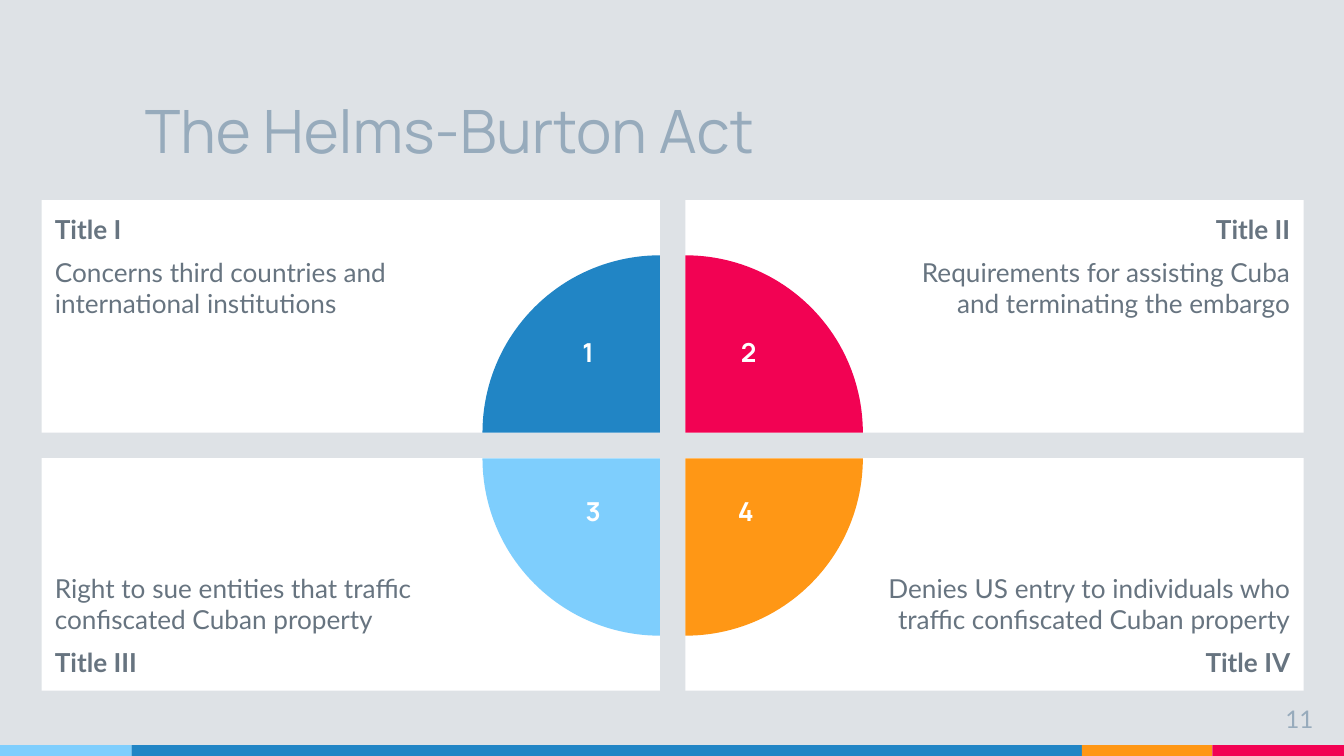
"""Build the Helms-Burton Act slide: four cards around a divided circle."""
from pptx import Presentation
from pptx.dml.color import RGBColor
from pptx.enum.shapes import MSO_SHAPE
from pptx.enum.text import MSO_ANCHOR, PP_ALIGN
from pptx.util import Inches, Pt

COLORS = {
    "background": "DEE2E6", "heading": "97ABBC", "body": "677480", "white": "FFFFFF",
    "blue": "2185C5", "red": "F20253", "orange": "FF9715", "sky": "7ECEFD",
}
TITLE = "The Helms-Burton Act"
PAGE_NUMBER = "11"
CARDS = [
    {"column": 0, "row": 0, "title": "Title I", "color": "blue", "turn": 0,
     "text": "Concerns third countries and international institutions",
     "number": "1", "number_box": (4.2, 2.45, 0.35, 0.55)},
    {"column": 1, "row": 0, "title": "Title II", "color": "red", "turn": 90,
     "text": "Requirements for assisting Cuba and terminating the embargo",
     "number": "2", "number_box": (5.35, 2.45, 0.44, 0.55)},
    {"column": 0, "row": 1, "title": "Title III", "color": "sky", "turn": 270,
     "text": "Right to sue entities that traffic confiscated Cuban property",
     "number": "3", "number_box": (4.2, 3.64, 0.43, 0.58)},
    {"column": 1, "row": 1, "title": "Title IV", "color": "orange", "turn": 180,
     "text": "Denies US entry to individuals who traffic confiscated Cuban property",
     "number": "4", "number_box": (5.33, 3.64, 0.44, 0.58)},
]
WIDTH = 10
HEIGHT = WIDTH * 9 / 16
STRIPES = [("sky", 0.98), ("blue", 7.07), ("orange", 0.97), ("red", 0.98)]
STRIPE_HEIGHT = 0.08
CARD_LEFT, CARD_TOP, CARD_WIDTH, CARD_HEIGHT = 0.31, 1.49, 4.6, 1.73
GAP = 0.19
DIAMETER = 2.64
INSET, CIRCLE_INSET = 0.1, 1.5


def rgb(name):
    return RGBColor.from_string(COLORS[name])


def add_block(slide, kind, box, color):
    shape = slide.shapes.add_shape(kind, *map(Inches, box))
    shape.shadow.inherit = False
    shape.fill.solid()
    shape.fill.fore_color.rgb = rgb(color)
    shape.line.fill.background()
    return shape


def set_insets(frame, left=INSET, top=INSET, right=INSET, bottom=INSET):
    frame.margin_left, frame.margin_top = Inches(left), Inches(top)
    frame.margin_right, frame.margin_bottom = Inches(right), Inches(bottom)
    frame.word_wrap = True


def write(paragraph, text, size, font, color, align=PP_ALIGN.LEFT, bold=False):
    paragraph.text = text
    paragraph.alignment = align
    paragraph.font.size = Pt(size)
    paragraph.font.name = font
    paragraph.font.color.rgb = rgb(color)
    paragraph.font.bold = bold


def add_label(slide, box, *style, inset=INSET, anchor=MSO_ANCHOR.TOP):
    frame = slide.shapes.add_textbox(*map(Inches, box)).text_frame
    set_insets(frame, top=inset, bottom=inset)
    frame.vertical_anchor = anchor
    write(frame.paragraphs[0], *style)


def add_card(slide, card):
    on_right, on_bottom = card["column"] == 1, card["row"] == 1
    left = CARD_LEFT + card["column"] * (CARD_WIDTH + GAP)
    top = CARD_TOP + card["row"] * (CARD_HEIGHT + GAP)
    shape = add_block(slide, MSO_SHAPE.RECTANGLE, (left, top, CARD_WIDTH, CARD_HEIGHT), "white")
    frame = shape.text_frame
    set_insets(frame, **{"left" if on_right else "right": CIRCLE_INSET})
    frame.vertical_anchor = MSO_ANCHOR.BOTTOM if on_bottom else MSO_ANCHOR.TOP
    align = PP_ALIGN.RIGHT if on_right else PP_ALIGN.LEFT
    lines = [(card["title"], True), (card["text"], False)]
    first, second = frame.paragraphs[0], frame.add_paragraph()
    for paragraph, (text, bold) in zip((first, second), lines[::-1] if on_bottom else lines):
        write(paragraph, text, 14, "Lato", "body", align, bold)
    second.space_before = second.space_after = Pt(6)


def add_quarter(slide, card):
    center_x = CARD_LEFT + CARD_WIDTH + card["column"] * GAP
    center_y = CARD_TOP + CARD_HEIGHT + card["row"] * GAP
    box = (center_x - DIAMETER / 2, center_y - DIAMETER / 2, DIAMETER, DIAMETER)
    quarter = add_block(slide, MSO_SHAPE.PIE, box, card["color"])
    quarter.adjustments[0], quarter.adjustments[1] = 108, 162
    quarter.rotation = card["turn"]


def main():
    presentation = Presentation()
    presentation.slide_width, presentation.slide_height = Inches(WIDTH), Inches(HEIGHT)
    slide = presentation.slides.add_slide(presentation.slide_layouts[6])
    slide.background.fill.solid()
    slide.background.fill.fore_color.rgb = rgb("background")

    left = 0
    for color, width in STRIPES:
        box = (left, HEIGHT - STRIPE_HEIGHT, width, STRIPE_HEIGHT)
        add_block(slide, MSO_SHAPE.RECTANGLE, box, color)
        left += width

    add_label(slide, (0.98, 0.39, 7.07, 0.94), TITLE, 32, "Manrope", "heading",
              anchor=MSO_ANCHOR.BOTTOM)
    add_label(slide, (9.27, 5.14, 0.6, 0.34), PAGE_NUMBER, 13, "Lato", "heading", PP_ALIGN.RIGHT)
    for card in CARDS:
        add_card(slide, card)
    for card in CARDS:
        add_quarter(slide, card)
    for card in CARDS:
        add_label(slide, card["number_box"], card["number"], 14, "Manrope", "white",
                  PP_ALIGN.CENTER, True, inset=0.05)
    presentation.save("out.pptx")


if __name__ == "__main__":
    main()
